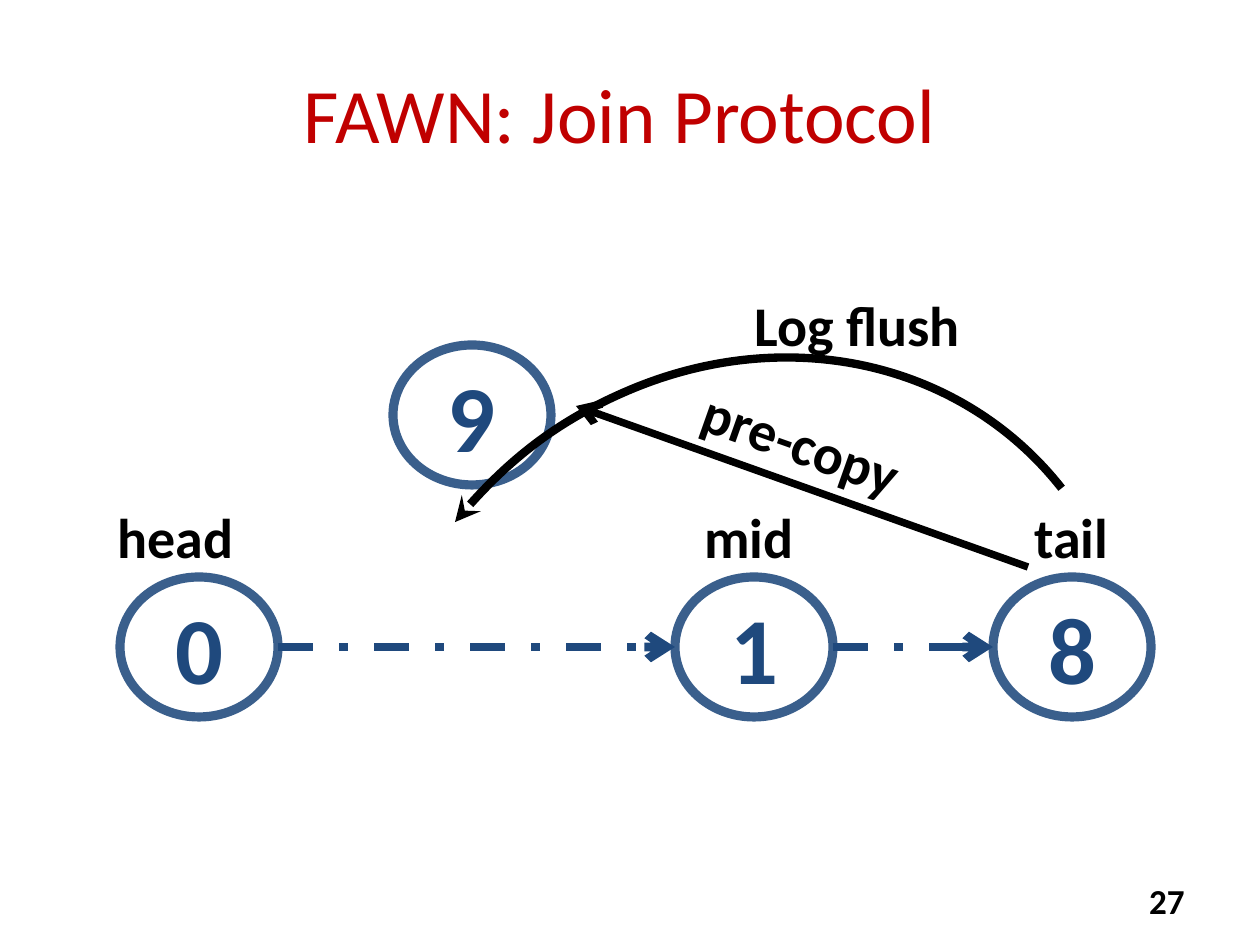
from lxml.etree import SubElement
from pptx import Presentation
from pptx.dml.color import RGBColor
from pptx.enum.dml import MSO_LINE
from pptx.enum.shapes import MSO_CONNECTOR, MSO_SHAPE
from pptx.enum.text import MSO_ANCHOR as ANCHOR, PP_ALIGN as ALIGN
from pptx.oxml.ns import qn
from pptx.util import Pt

PX = 914400 / 126
FONT = "Calibri"
RED = RGBColor(0xC0, 0x00, 0x00)
BLACK = RGBColor(0x00, 0x00, 0x00)
WHITE = RGBColor(0xFF, 0xFF, 0xFF)
NAVY = RGBColor(0x1F, 0x49, 0x7D)
OUTLINE = RGBColor(0x3A, 0x5F, 0x8C)
NODE_WIDTH, NODE_HEIGHT = 158, 140
LABEL_HEIGHT = 81


def px(*lengths):
    """Turn lengths in px into EMU."""
    return [round(length * PX) for length in lengths]


def write(shape, text, size=32, color=BLACK, bold=True, align=ALIGN.LEFT,
          anchor=ANCHOR.TOP, wrap=False):
    """Put one formatted line of text into a shape."""
    frame = shape.text_frame
    frame.word_wrap = wrap
    frame.vertical_anchor = anchor
    paragraph = frame.paragraphs[0]
    paragraph.alignment = align
    run = paragraph.add_run()
    run.text = text
    run.font.name = FONT
    run.font.size = Pt(size)
    run.font.bold = bold
    run.font.color.rgb = color


def add_text(slide, box, text, rotation=0, **style):
    """Add a text box and return it."""
    text_box = slide.shapes.add_textbox(*px(*box))
    text_box.rotation = rotation
    write(text_box, text, **style)
    return text_box


def style_line(shape, color, width, dash=None, **ends):
    """Format a line and its headEnd or tailEnd arrowheads."""
    shape.line.color.rgb = color
    shape.line.width = Pt(width)
    if dash is not None:
        shape.line.dash_style = dash
    for tag, kind in ends.items():
        SubElement(shape.line._get_or_add_ln(), qn(f"a:{tag}"), type=kind)


def add_arrow(slide, start, end, color, width, dash=None):
    """Draw a straight arrow between two points."""
    arrow = slide.shapes.add_connector(MSO_CONNECTOR.STRAIGHT, *px(*start, *end))
    style_line(arrow, color, width, dash, tailEnd="arrow")
    SubElement(arrow._element.spPr, qn("a:effectLst"))


def add_node(slide, left, top, text, fill=None):
    """Draw a numbered ring node."""
    node = slide.shapes.add_shape(
        MSO_SHAPE.OVAL, *px(left, top, NODE_WIDTH, NODE_HEIGHT))
    node.shadow.inherit = False
    if fill is None:
        node.fill.background()
    else:
        node.fill.solid()
        node.fill.fore_color.rgb = fill
    style_line(node, OUTLINE, 5.25)
    write(node, text, size=54, color=NAVY, align=ALIGN.CENTER,
          anchor=ANCHOR.MIDDLE, wrap=True)


def add_chain(slide, left, top):
    """Draw the labelled replica chain and the arrows between its nodes."""
    replicas = [("0", 0, "head", -15, 142),
                ("1", 555, "mid", 17, 116),
                ("8", 873, "tail", 29, 101)]
    for number, offset, role, shift, width in replicas:
        add_node(slide, left + offset, top, number)
        add_text(slide, (left + offset + shift, top - LABEL_HEIGHT, width,
                         LABEL_HEIGHT), role)
    middle = top + NODE_HEIGHT / 2
    for before, after in zip(replicas, replicas[1:]):
        add_arrow(slide, (left + before[1] + NODE_WIDTH, middle),
                  (left + after[1], middle), NAVY, 5, MSO_LINE.DASH_DOT)


def add_join(slide, left, top):
    """Draw the joining node with its pre-copy and log flush arrows."""
    add_node(slide, left, top, "9", fill=WHITE)
    add_arrow(slide, (left + 635, top + 222), (left + 183, top + 61), BLACK, 4.25)
    add_text(slide, (left + 294, top + 58, 232, LABEL_HEIGHT), "pre-copy",
             rotation=19.5)
    arc = slide.shapes.add_shape(
        MSO_SHAPE.ARC, *px(left - 63, top + 38, 833, 750))
    arc.shadow.inherit = False
    arc.fill.background()
    arc.rotation = 309
    arc.adjustments[0] = 162
    arc.adjustments[1] = 6.26
    style_line(arc, BLACK, 4.75, headEnd="stealth")
    add_text(slide, (left + 349, top - 61, 234, LABEL_HEIGHT), "Log flush")


def main():
    """Build and save the slide."""
    presentation = Presentation()
    presentation.slide_width, presentation.slide_height = px(1260, 945)
    slide = presentation.slides.add_slide(presentation.slide_layouts[6])
    add_text(slide, (53, 34, 1134, 158), "FAWN: Join Protocol", size=44,
             color=RED, bold=False, align=ALIGN.CENTER, anchor=ANCHOR.MIDDLE,
             wrap=True)
    add_text(slide, (903, 876, 294, 50), "27", size=20, align=ALIGN.RIGHT,
             anchor=ANCHOR.MIDDLE, wrap=True)
    add_chain(slide, 120, 577)
    add_join(slide, 393, 345)
    presentation.save("out.pptx")


if __name__ == "__main__":
    main()
